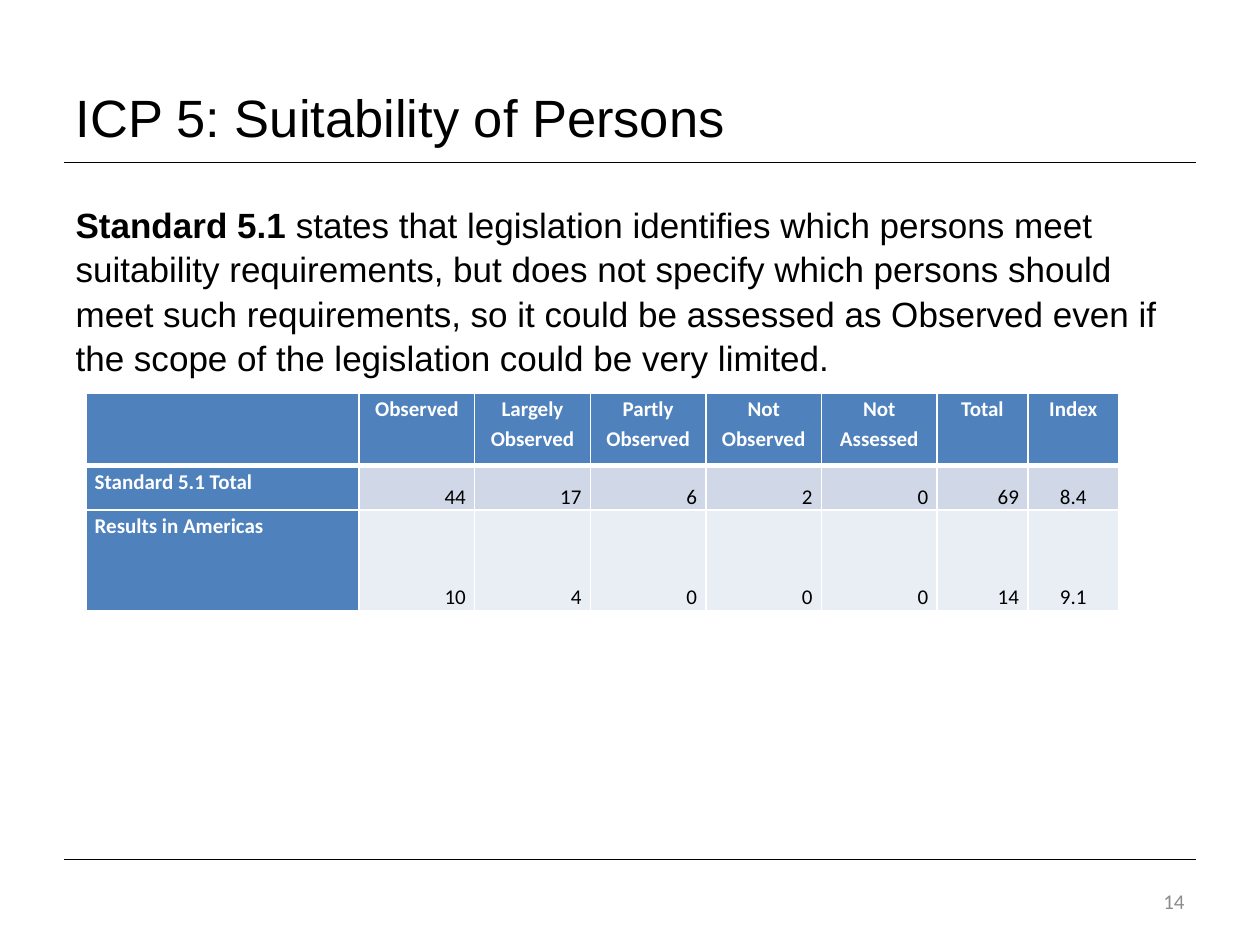
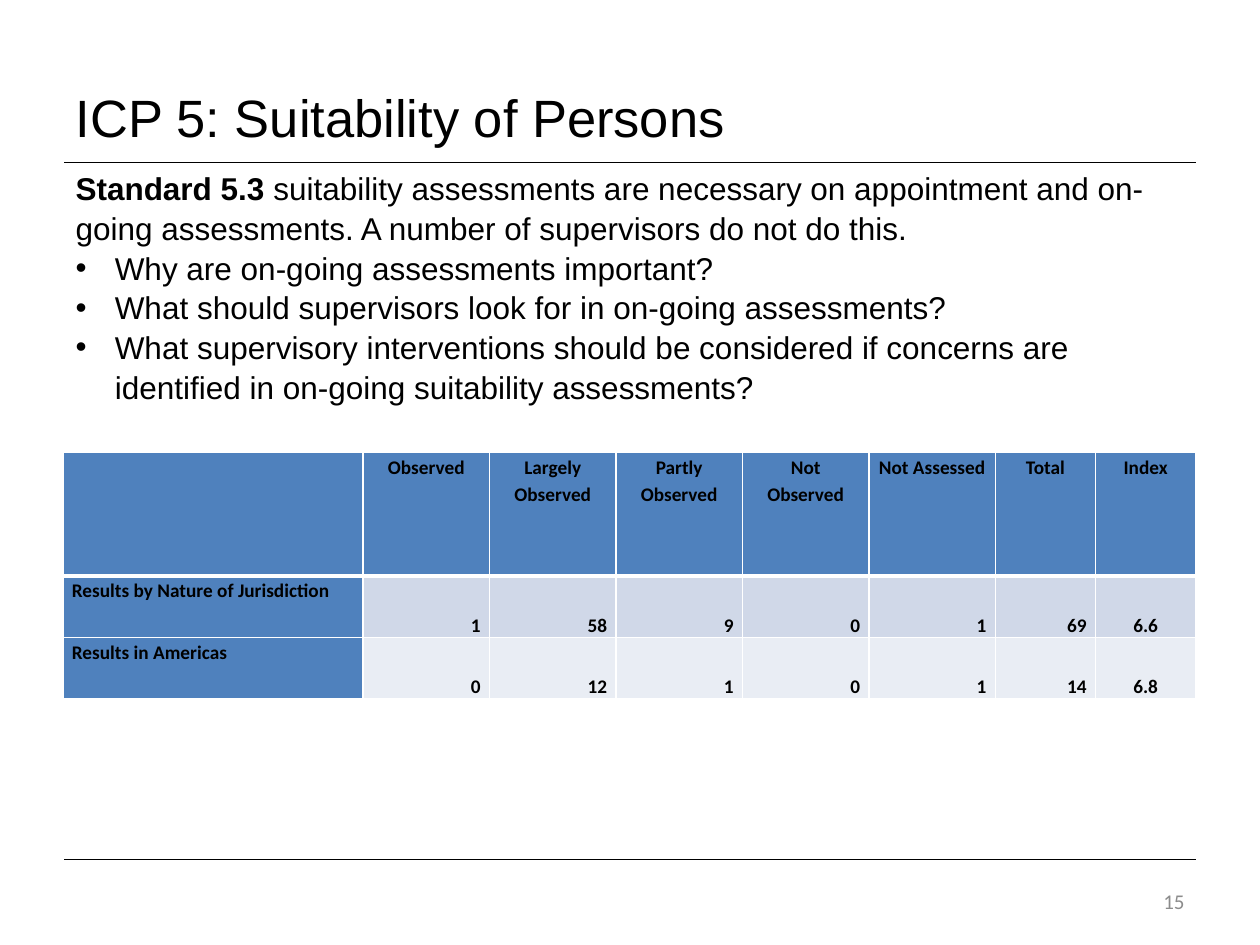
from pptx import Presentation
from pptx.dml.color import RGBColor as Rgb
from pptx.enum.shapes import MSO_CONNECTOR as Conn
from pptx.enum.text import MSO_ANCHOR as Anchor, MSO_AUTO_SIZE as Auto, PP_ALIGN as Align
from pptx.oxml.ns import qn
from pptx.util import Cm, Pt
from lxml.etree import SubElement as Sub

HUES = {"ink": "000000", "white": "FFFFFF", "blue": "4F81BD",
        "dark": "D0D8E8", "light": "E9EDF4", "grey": "8C8C8C"}
TITLE = "ICP 5: Suitability of Persons"
HEADS = ["", "Observed", "Largely Observed", "Partly Observed",
         "Not Observed", "Not Assessed", "Total", "Index"]

# Each item of "text" is (bullet, bold part, plain part)
PAGES = [
    {"num": "14", "body": (1.27, 3.94, 22.86, 13.08), "size": 20,
     "text": [(False, "Standard 5.1",
               " states that legislation identifies which persons meet suitability "
               "requirements, but does not specify which persons should meet such "
               "requirements, so it could be assessed as Observed even if the scope "
               "of the legislation could be very limited.")],
     "spot": (1.73, 7.92), "cols": [5.51] + [2.33] * 5 + [1.83] * 2,
     "tall": [1.47, 0.89, 2.03], "pt": 12, "head": "white", "bold": False,
     "rows": [["Standard 5.1 Total", "44", "17", "6", "2", "0", "69", "8.4"],
              ["Results in Americas", "10", "4", "0", "0", "0", "14", "9.1"]]},
    {"num": "15", "body": (1.27, 3.25, 22.6, 5.33), "size": 18,
     "text": [(False, "Standard 5.3",
               " suitability assessments are necessary on appointment and on-going "
               "assessments. A number of supervisors do not do this."),
              (True, "", "Why are on-going assessments important?"),
              (True, "", "What should supervisors look for in on-going assessments?"),
              (True, "", "What supervisory interventions should be considered if "
               "concerns are identified in on-going suitability assessments?")],
     "spot": (1.27, 9.12), "cols": [6.05] + [2.55] * 5 + [2.02] * 2,
     "tall": [2.49, 1.24, 1.24], "pt": 11, "head": "ink", "bold": True,
     "rows": [["Results by Nature of Jurisdiction", "1", "58", "9", "0", "1", "69", "6.6"],
              ["Results in Americas", "0", "12", "1", "0", "1", "14", "6.8"]]},
]


def add_run(para, text, face, size, hue, bold=False):
    run = para.add_run()
    run.text = text
    font = run.font
    font.name, font.size, font.bold = face, Pt(size), bold
    font.color.rgb = Rgb.from_string(HUES[hue])


def place(shape, left, top, width, height):
    shape.left, shape.top = Cm(left), Cm(top)
    shape.width, shape.height = Cm(width), Cm(height)


prs = Presentation()
prs.slide_width, prs.slide_height = Cm(25.4), Cm(19.05)

for page in PAGES:
    slide = prs.slides.add_slide(prs.slide_layouts[1])
    title, body = slide.placeholders

    # Rules above and below the content
    for y in (17.32, 3.28):
        rule = slide.shapes.add_connector(Conn.STRAIGHT, Cm(1.3), Cm(y), Cm(24.1), Cm(y))
        rule.line.color.rgb = Rgb.from_string(HUES["ink"])
        rule.line.width = Pt(0.75)
        Sub(rule.element.spPr, qn("a:effectLst"))

    # Title
    place(title, 1.27, 0.76, 22.86, 2.36)
    frame = title.text_frame
    frame.auto_size = Auto.NONE
    frame.vertical_anchor = Anchor.BOTTOM
    para = frame.paragraphs[0]
    para.alignment = Align.LEFT
    add_run(para, TITLE, "Arial", 30, "ink")

    # Body text
    place(body, *page["body"])
    frame = body.text_frame
    frame.auto_size = Auto.NONE
    frame.vertical_anchor = Anchor.TOP
    for i, (dot, lead, rest) in enumerate(page["text"]):
        para = frame.add_paragraph() if i else frame.paragraphs[0]
        props = para._p.get_or_add_pPr()
        dent = Cm(0.79) if dot else 0
        props.set("marL", str(dent))
        props.set("indent", str(-dent))
        if dot:
            Sub(props, qn("a:buFont"), typeface="Arial")
            Sub(props, qn("a:buChar"), char="•")
        else:
            Sub(props, qn("a:buNone"))
        para.space_before = Pt(0)
        para.line_spacing = 1.05
        if lead:
            add_run(para, lead, "Arial", page["size"], "ink", True)
        add_run(para, rest, "Arial", page["size"], "ink")

    # Page number
    box = slide.shapes.add_textbox(Cm(18.21), Cm(17.65), Cm(5.92), Cm(1.02))
    frame = box.text_frame
    frame.word_wrap = True
    frame.vertical_anchor = Anchor.MIDDLE
    para = frame.paragraphs[0]
    para.alignment = Align.RIGHT
    add_run(para, page["num"], "Calibri", 12, "grey")

    # Results table
    data = [HEADS] + page["rows"]
    left, top = page["spot"]
    grid = slide.shapes.add_table(len(data), len(HEADS), Cm(left), Cm(top),
                                  Cm(sum(page["cols"])), Cm(sum(page["tall"]))).table
    grid.first_col = True
    for col, width in zip(grid.columns, page["cols"]):
        col.width = Cm(width)
    for r, (row, tall) in enumerate(zip(data, page["tall"])):
        grid.rows[r].height = Cm(tall)
        for c, text in enumerate(row):
            cell = grid.cell(r, c)
            label = r == 0 or c == 0
            cell.margin_left = cell.margin_right = Cm(0.18)
            cell.margin_top = cell.margin_bottom = 0
            cell.vertical_anchor = Anchor.TOP if label else Anchor.BOTTOM

            # White borders, thicker under the heading row
            props = cell._tc.get_or_add_tcPr()
            for side in "LRTB":
                thick = (r, side) in ((0, "B"), (1, "T"))
                edge = Sub(props, qn(f"a:ln{side}"), w=str(Pt(3 if thick else 1)))
                Sub(Sub(edge, qn("a:solidFill")), qn("a:srgbClr"), val=HUES["white"])
            cell.fill.solid()
            shade = "blue" if label else ("dark" if r == 1 else "light")
            cell.fill.fore_color.rgb = Rgb.from_string(HUES[shade])

            if text:
                para = cell.text_frame.paragraphs[0]
                para.line_spacing = 1.15
                if r == 0 or c == len(row) - 1:
                    para.alignment = Align.CENTER
                else:
                    para.alignment = Align.RIGHT if c else Align.LEFT
                if not label:
                    para.space_after = Pt(10)
                add_run(para, text, "Calibri", page["pt"],
                        page["head"] if label else "ink", label or page["bold"])

prs.save("out.pptx")
